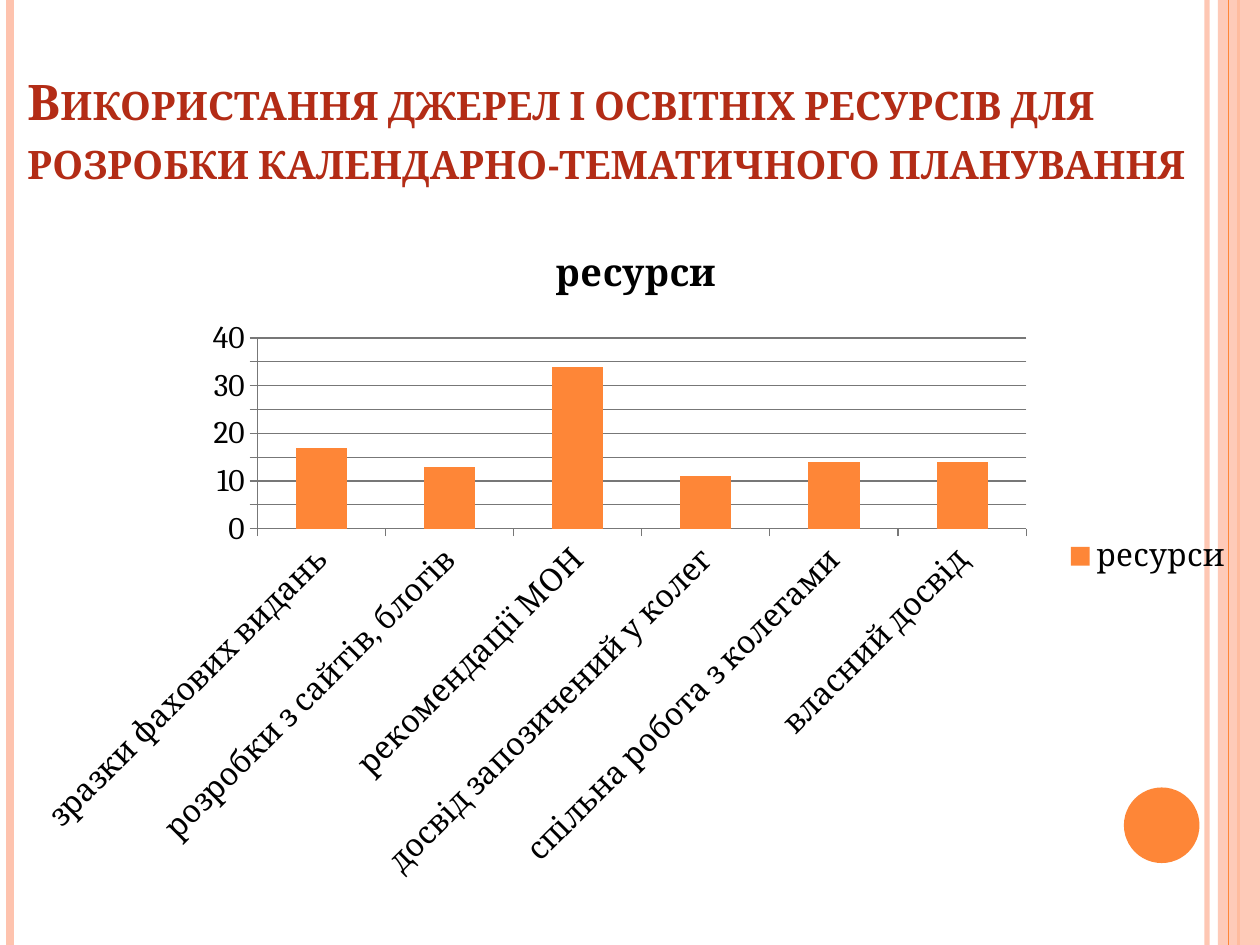
from lxml import etree
from pptx import Presentation
from pptx.chart.data import CategoryChartData
from pptx.dml.color import RGBColor
from pptx.enum import chart as ch, shapes, text
from pptx.oxml.ns import qn
from pptx.util import Pt

# Content
TITLE = ("Використання джерел і освітніх ресурсів для розробки "
         "календарно-тематичного планування")
NAME = "ресурси"
DATA = {
    "зразки фахових видань": 17,
    "розробки з сайтів, блогів": 13,
    "рекомендації МОН": 34,
    "досвід запозичений у колег": 11,
    "спільна робота з колегами": 14,
    "власний досвід": 14,
}
FONT = "Cambria"
ORANGE, PEACH, RED, GREY, BLACK = "FE8637", "FEC3AE", "B32C16", "777777", "000000"
WIDE, HIGH = 720, 540

# Stripes: x, width, colour, opacity in percent
BACK = [(689.8, 3, PEACH, 93), (5.8, 4.5, PEACH, 100), (707.8, 1.5, ORANGE, 100)]
FRONT = [(702, 0.75, ORANGE, 100)]
BAND = (696, 0, 24, HIGH)
DOT = (642.25, 450, 43.2, 43.2)
HEAD = (8.64, 9.36, 692, 102.24)
CHART = (14.4, 126, 697.7, 383.8)
PLOT = {"x": 0.19, "y": 0.175, "w": 0.63, "h": 0.284}


def rgb(code):
    return RGBColor.from_string(code)


def box(spot):
    return [Pt(v) for v in spot]


def fade(fill, rate):
    if rate < 100:
        clr = fill._xPr.find(".//" + qn("a:srgbClr"))
        etree.SubElement(clr, qn("a:alpha"), val=str(rate * 1000))


def stripe(slide, x, width, code, rate):
    line = slide.shapes.add_connector(
        shapes.MSO_CONNECTOR.STRAIGHT, Pt(x), 0, Pt(x), Pt(HIGH))
    line.line.width = Pt(width)
    line.line.color.rgb = rgb(code)
    fade(line.line.fill, rate)
    etree.SubElement(line._element.spPr, qn("a:effectLst"))


def shape(slide, kind, spot, code, rate=100):
    item = slide.shapes.add_shape(kind, *box(spot))
    item.shadow.inherit = False
    item.fill.solid()
    item.fill.fore_color.rgb = rgb(code)
    fade(item.fill, rate)
    item.line.fill.background()


def style(font, size, code, bold=False):
    font.name, font.size, font.bold = FONT, Pt(size), bold
    font.color.rgb = rgb(code)


def head(slide):
    frame = slide.shapes.add_textbox(*box(HEAD)).text_frame
    frame.word_wrap = True
    frame.vertical_anchor = text.MSO_ANCHOR.BOTTOM
    run = frame.paragraphs[0].add_run()
    run.text = TITLE
    style(run.font, 28, RED, True)
    run.font._element.set("cap", "small")


def place(chart):
    area = chart._chartSpace.chart.plotArea
    for old in area.findall(qn("c:layout")):
        area.remove(old)
    layout = etree.Element(qn("c:layout"))
    area.insert(0, layout)
    man = etree.SubElement(layout, qn("c:manualLayout"))
    etree.SubElement(man, qn("c:layoutTarget"), val="inner")
    for key in "xy":
        etree.SubElement(man, qn(f"c:{key}Mode"), val="edge")
    for key, part in PLOT.items():
        etree.SubElement(man, qn("c:" + key), val=str(part))


def graph(slide):
    data = CategoryChartData()
    data.categories = list(DATA)
    data.add_series(NAME, list(DATA.values()))
    chart = slide.shapes.add_chart(
        ch.XL_CHART_TYPE.COLUMN_CLUSTERED, *box(CHART), data).chart
    style(chart.font, 18, BLACK)

    # Title and legend
    chart.has_title = True
    run = chart.chart_title.text_frame.paragraphs[0].add_run()
    run.text = NAME
    style(run.font, 21.6, BLACK, True)
    chart.chart_title.include_in_layout = False
    chart.has_legend = True
    chart.legend.position = ch.XL_LEGEND_POSITION.RIGHT
    chart.legend.include_in_layout = False
    style(chart.legend.font, 18, BLACK)

    # Columns
    plot = chart.plots[0]
    plot.gap_width = 150
    plot.vary_by_categories = False
    fill = plot.series[0].format.fill
    fill.solid()
    fill.fore_color.rgb = rgb(ORANGE)

    # Axes
    cat, val = chart.category_axis, chart.value_axis
    val.minimum_scale, val.maximum_scale, val.major_unit = 0, 40, 5
    val.has_major_gridlines = True
    for axis in (cat, val):
        axis.major_tick_mark = ch.XL_TICK_MARK.OUTSIDE
        style(axis.tick_labels.font, 18, BLACK)
    cat._element.txPr.bodyPr.set("rot", "-2700000")
    for part in (cat, val, val.major_gridlines):
        part.format.line.color.rgb = rgb(GREY)
        part.format.line.width = Pt(0.75)
    place(chart)


def main():
    deck = Presentation()
    deck.slide_width, deck.slide_height = Pt(WIDE), Pt(HIGH)
    slide = deck.slides.add_slide(deck.slide_layouts[6])
    for row in BACK:
        stripe(slide, *row)
    shape(slide, shapes.MSO_SHAPE.RECTANGLE, BAND, PEACH, 87)
    for row in FRONT:
        stripe(slide, *row)
    shape(slide, shapes.MSO_SHAPE.OVAL, DOT, ORANGE)
    head(slide)
    graph(slide)
    deck.save("out.pptx")


if __name__ == "__main__":
    main()
